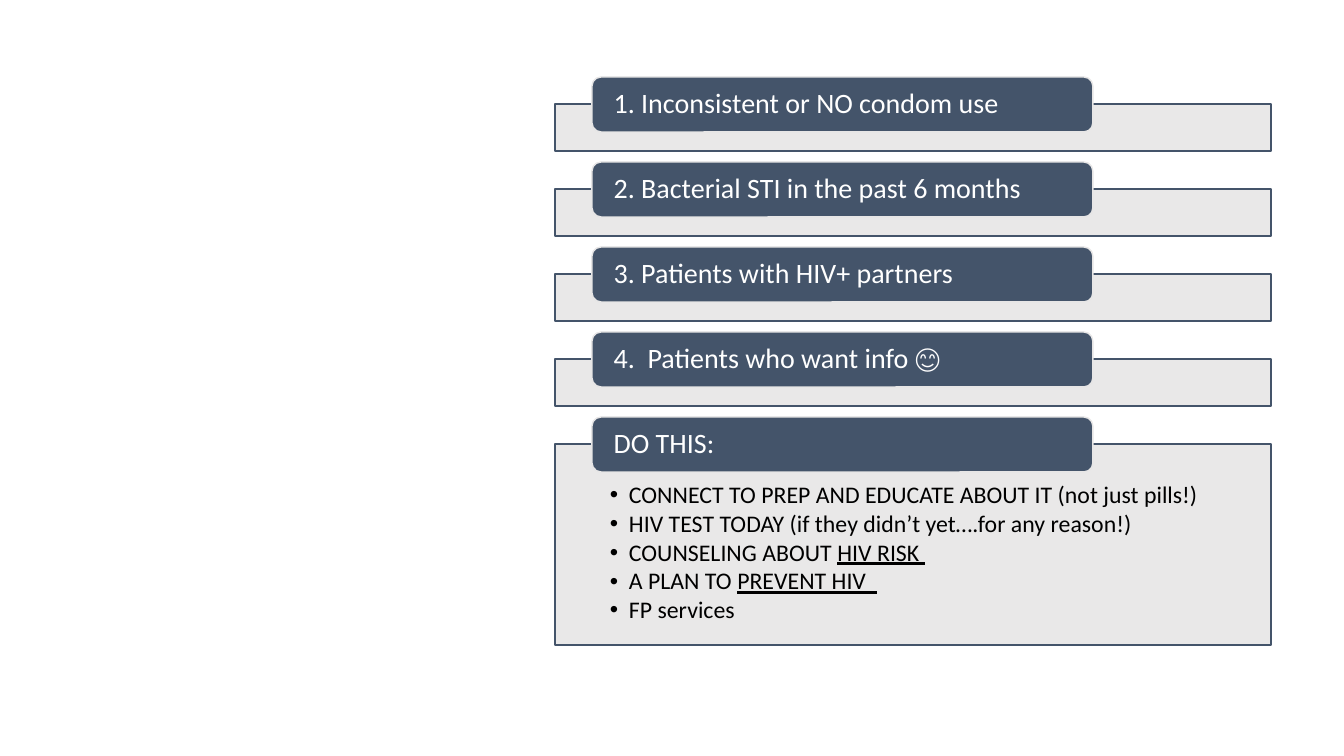
from dataclasses import dataclass

from lxml.etree import SubElement
from pptx import Presentation
from pptx.dml.color import RGBColor
from pptx.enum.shapes import MSO_SHAPE
from pptx.enum.text import MSO_ANCHOR, PP_ALIGN
from pptx.oxml.ns import qn
from pptx.util import Emu, Pt

CRITERIA = [
    "1. Inconsistent or NO condom use",
    "2. Bacterial STI in the past 6 months",
    "3. Patients with HIV+ partners",
    "4.  Patients who want info 😊",
]
ACTION_TITLE = "DO THIS:"
# Each action: plain words, then underlined words
ACTIONS = [
    ("CONNECT TO PREP AND EDUCATE ABOUT IT (not just pills!)", ""),
    ("HIV TEST TODAY (if they didn’t yet….for any reason!)", ""),
    ("COUNSELING ABOUT ", "HIV RISK "),
    ("A PLAN TO ", "PREVENT HIV  "),
    ("FP services", ""),
]


@dataclass(frozen=True)
class Theme:
    font: str = "Calibri"
    navy: RGBColor = RGBColor(0x44, 0x54, 0x6A)
    grey: RGBColor = RGBColor(0xE7, 0xE6, 0xE6)
    white: RGBColor = RGBColor(255, 255, 255)
    black: RGBColor = RGBColor(0, 0, 0)
    title_size: int = 20
    body_size: int = 17
    line_width: int = 1
    panel_alpha: int = 90


THEME = Theme()
SLIDE_W, SLIDE_H = 1344, 756
PANEL_X, PANEL_Y, PANEL_W = 555, 104, 716
PANEL_H, ACTION_H = 47, 201
PITCH = 85
TAB_X, TAB_W, TAB_H = 592, 501, 55
TAB_RISE = 27
TAB_MARGINS = (19, 0, 19, 0)
PANEL_MARGINS = (55, 39, 55, 13)
BULLET_INDENT = 19


def px(n):
    return Emu(round(n * 914400 / 100.8))


def add_box(slide, kind, box, fill, line):
    s = slide.shapes.add_shape(kind, *map(px, box))
    s.shadow.inherit = False
    s.fill.solid()
    s.fill.fore_color.rgb = fill
    s.line.color.rgb = line
    s.line.width = Pt(THEME.line_width)
    return s


def prepare_text(s, margins, anchor):
    tf = s.text_frame
    tf.word_wrap = True
    tf.vertical_anchor = anchor
    tf.margin_left, tf.margin_top, tf.margin_right, tf.margin_bottom = map(px, margins)
    return tf


def style_paragraph(p, size, color):
    p.alignment = PP_ALIGN.LEFT
    p.line_spacing = 0.9
    for r in p.runs:
        r.font.name = THEME.font
        r.font.size = Pt(size)
        r.font.color.rgb = color


def add_bullet(p):
    pPr = p._p.get_or_add_pPr()
    pPr.set("marL", str(px(BULLET_INDENT)))
    pPr.set("indent", str(-px(BULLET_INDENT)))
    SubElement(pPr, qn("a:buFont")).set("typeface", "Arial")
    SubElement(pPr, qn("a:buChar")).set("char", "•")


def add_panel(slide, y, h):
    s = add_box(slide, MSO_SHAPE.RECTANGLE, (PANEL_X, y, PANEL_W, h),
                THEME.grey, THEME.navy)
    color = s.fill._xPr.find(qn("a:solidFill"))[0]
    SubElement(color, qn("a:alpha")).set("val", str(THEME.panel_alpha * 1000))
    return s


def add_tab(slide, y, title):
    s = add_box(slide, MSO_SHAPE.ROUNDED_RECTANGLE, (TAB_X, y, TAB_W, TAB_H),
                THEME.navy, THEME.grey)
    tf = prepare_text(s, TAB_MARGINS, MSO_ANCHOR.MIDDLE)
    tf.text = title
    style_paragraph(tf.paragraphs[0], THEME.title_size, THEME.white)


def fill_actions(panel):
    tf = prepare_text(panel, PANEL_MARGINS, MSO_ANCHOR.TOP)
    for i, (plain, underlined) in enumerate(ACTIONS):
        p = tf.add_paragraph() if i else tf.paragraphs[0]
        p.text = plain
        if underlined:
            r = p.add_run()
            r.text = underlined
            r.font.underline = True
        style_paragraph(p, THEME.body_size, THEME.black)
        p.space_after = Pt(2.2)
        add_bullet(p)


def main():
    prs = Presentation()
    prs.slide_width, prs.slide_height = px(SLIDE_W), px(SLIDE_H)
    slide = prs.slides.add_slide(prs.slide_layouts[6])
    for i, title in enumerate(CRITERIA + [ACTION_TITLE]):
        y = PANEL_Y + i * PITCH
        is_action = title == ACTION_TITLE
        panel = add_panel(slide, y, ACTION_H if is_action else PANEL_H)
        if is_action:
            fill_actions(panel)
        add_tab(slide, y - TAB_RISE, title)
    prs.save("out.pptx")


if __name__ == "__main__":
    main()
